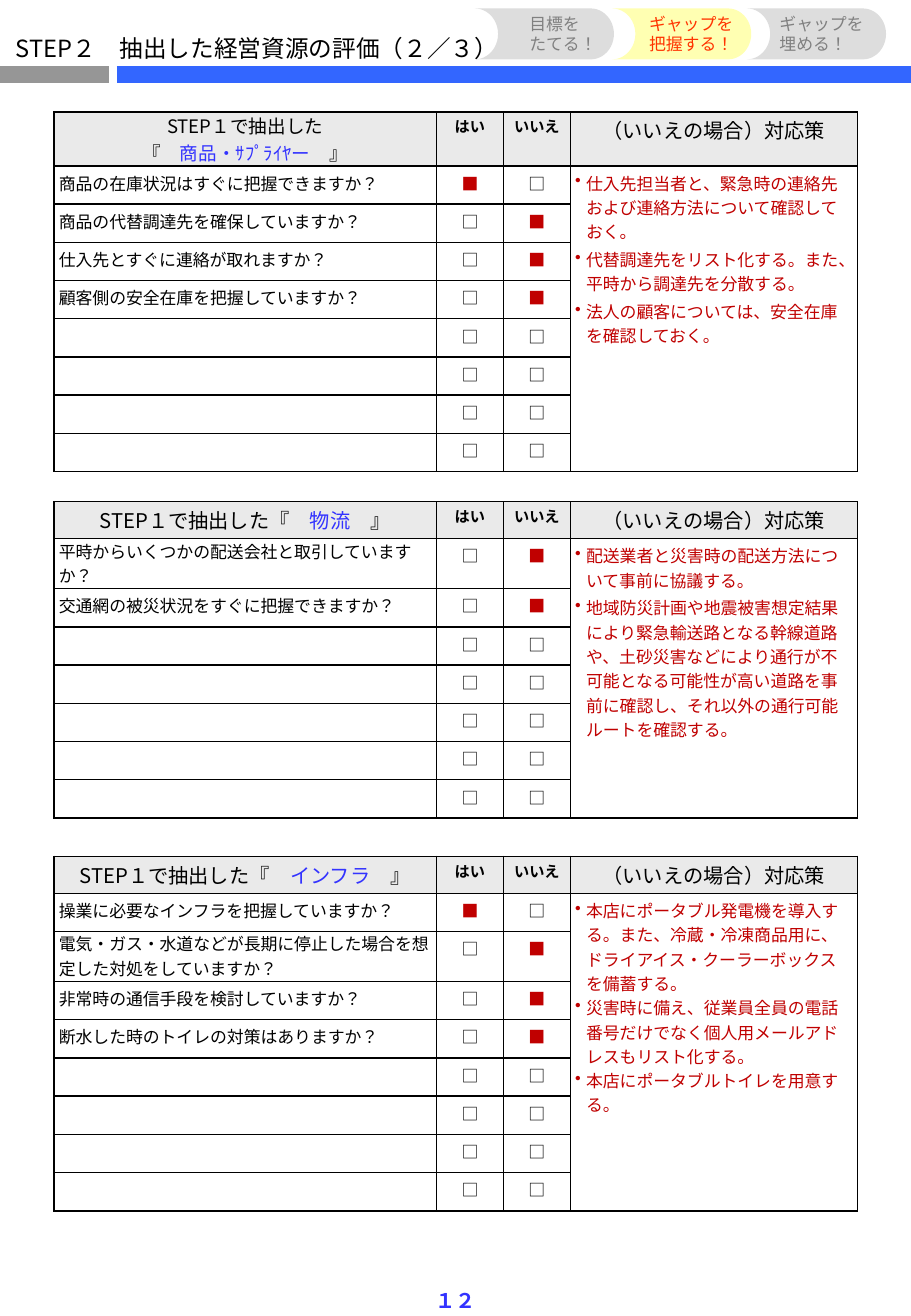
from dataclasses import dataclass

from lxml import etree
from pptx import Presentation
from pptx.dml.color import RGBColor
from pptx.enum import lang, shapes, text
from pptx.oxml import ns
from pptx.util import Pt


@dataclass(frozen=True)
class Theme:
    font: str = "Noto Sans CJK JP"
    ink: str = "000000"
    blue: str = "3333FF"
    bar_blue: str = "3366FF"
    bar_gray: str = "969696"
    red: str = "C00000"
    header_fill: str = "EAEAEA"
    step_fill: str = "DDDDDD"
    step_ink: str = "808080"
    active_fill: str = "FFFFB2"
    active_ink: str = "FF3300"
    title: int = 14
    heading: int = 12
    tall_heading: int = 11
    body: int = 10
    answer: int = 9


theme = Theme()
LEFT, CENTER = text.PP_ALIGN.LEFT, text.PP_ALIGN.CENTER
MIDDLE, TOP = text.MSO_ANCHOR.MIDDLE, text.MSO_ANCHOR.TOP


def write(frame, lines, size=theme.body, color=theme.ink, bold=False, align=LEFT,
          anchor=MIDDLE, wrap=True, pitch=None, gap=0, bullet=False):
    """Each line is a string or a list of (string, colour) spans."""
    frame.word_wrap = wrap
    frame.vertical_anchor = anchor
    for number, line in enumerate(lines):
        para = frame.add_paragraph() if number else frame.paragraphs[0]
        para.alignment = align
        if pitch:
            para.line_spacing = Pt(pitch)
        para.space_before = Pt(gap if number else 0)
        if bullet:
            props = para._p.get_or_add_pPr()
            props.set("marL", str(Pt(6.5)))
            props.set("indent", str(-Pt(6.5)))
            etree.SubElement(props, ns.qn("a:buChar")).set("char", "•")
        for words, tint in [(line, color)] if isinstance(line, str) else line:
            span = para.add_run()
            span.text = words
            span.font.size, span.font.bold = Pt(size), bold
            span.font.name = theme.font
            span.font.language_id = lang.MSO_LANGUAGE_ID.JAPANESE
            span.font.color.rgb = RGBColor.from_string(tint)
            east_asian = etree.SubElement(span.font._element, ns.qn("a:ea"))
            east_asian.set("typeface", theme.font)
        if not line:
            end = etree.SubElement(para._p, ns.qn("a:endParaRPr"))
            end.set("sz", str(size * 100))


def dress(cell, fill=None, margin=2):
    """Set the fill, margins and black borders of a table cell."""
    cell.margin_left = cell.margin_right = Pt(2.88)
    cell.margin_top = cell.margin_bottom = Pt(margin)
    if fill:
        cell.fill.solid()
        cell.fill.fore_color.rgb = RGBColor.from_string(fill)
    else:
        cell.fill.background()
    props = cell._tc.get_or_add_tcPr()
    for place, side in enumerate(("lnL", "lnR", "lnT", "lnB")):
        border = etree.Element(ns.qn(f"a:{side}"), w=str(Pt(1)))
        solid = etree.SubElement(border, ns.qn("a:solidFill"))
        etree.SubElement(solid, ns.qn("a:srgbClr")).set("val", theme.ink)
        props.insert(place, border)


deck = Presentation()
deck.slide_width, deck.slide_height = Pt(540), Pt(779.76)
page = deck.slides.add_slide(deck.slide_layouts[5])

# Title and the two bars below it
title = page.shapes.title
title.left, title.top, title.width, title.height = Pt(2), Pt(16.5), Pt(323), Pt(24.5)
title.text_frame.auto_size = text.MSO_AUTO_SIZE.NONE
write(title.text_frame, ["STEP２　抽出した経営資源の評価（２／３）"], size=theme.title)

for start, end, color in ((0, 64.8, theme.bar_gray), (69.3, 540, theme.bar_blue)):
    bar = page.shapes.add_connector(shapes.MSO_CONNECTOR.STRAIGHT,
                                    Pt(start), Pt(44), Pt(end), Pt(44))
    bar.line.color.rgb = RGBColor.from_string(color)
    bar.line.width = Pt(10)
    etree.SubElement(bar._element.spPr, ns.qn("a:effectLst"))

# Progress steps: arrow left, label left, label width, lines, active
STEPS = [
    (442.8, 455, 64.8, ["ギャップを", "埋める！"], False),
    (362.9, 377.3, 64.8, ["ギャップを", "把握する！"], True),
    (281.5, 306.7, 54.7, ["目標を", "たてる！"], False),
]
for arrow_left, label_left, label_width, lines, active in STEPS:
    arrow = page.shapes.add_shape(shapes.MSO_SHAPE.FLOWCHART_STORED_DATA,
                                  Pt(arrow_left), Pt(5), Pt(82.4), Pt(30.2))
    arrow._element.spPr.xfrm.set("flipH", "1")
    arrow.shadow.inherit = False
    arrow.fill.solid()
    arrow.fill.fore_color.rgb = RGBColor.from_string(
        theme.active_fill if active else theme.step_fill)
    arrow.line.fill.background()
    label = page.shapes.add_textbox(Pt(label_left), Pt(4.3), Pt(label_width), Pt(31.7))
    write(label.text_frame, lines, wrap=False, pitch=12.2, anchor=TOP,
          color=theme.active_ink if active else theme.step_ink,
          align=CENTER if active else LEFT)

# Checklists: top, heading lines, rows, bullet gap, questions with answer, measures
COLUMNS = (226.7, 39.7, 39.7, 170.1)
ROW, TALL_ROW, HEADER, TALL_HEADER = 22.67, 29.6, 21.9, 32
YES, NO = "はい", "いいえ"
CHECKLISTS = [
    (66.3, ["STEP１で抽出した",
            [("『", theme.ink), ("　商品・ｻﾌﾟﾗｲﾔー　", theme.blue), ("』", theme.ink)]],
     8, 2,
     [("商品の在庫状況はすぐに把握できますか？", YES),
      ("商品の代替調達先を確保していますか？", NO),
      ("仕入先とすぐに連絡が取れますか？", NO),
      ("顧客側の安全在庫を把握していますか？", NO)],
     ["仕入先担当者と、緊急時の連絡先および連絡方法について確認しておく。",
      "代替調達先をリスト化する。また、平時から調達先を分散する。",
      "法人の顧客については、安全在庫を確認しておく。"]),
    (297.3, [[("STEP１で抽出した『　", theme.ink), ("物流　", theme.blue), ("』", theme.ink)]],
     7, 2,
     [("平時からいくつかの配送会社と取引していますか？", NO),
      ("交通網の被災状況をすぐに把握できますか？", NO)],
     ["配送業者と災害時の配送方法について事前に協議する。",
      "地域防災計画や地震被害想定結果により緊急輸送路となる幹線道路や、"
      "土砂災害などにより通行が不可能となる可能性が高い道路を事前に確認し、"
      "それ以外の通行可能ルートを確認する。"]),
    (507.4, [[("STEP１で抽出した『　", theme.ink), ("インフラ　", theme.blue), ("』", theme.ink)]],
     8, 0,
     [("操業に必要なインフラを把握していますか？", YES),
      ("電気・ガス・水道などが長期に停止した場合を想定した対処をしていますか？", NO),
      ("非常時の通信手段を検討していますか？", NO),
      ("断水した時のトイレの対策はありますか？", NO)],
     ["本店にポータブル発電機を導入する。また、冷蔵・冷凍商品用に、"
      "ドライアイス・クーラーボックスを備蓄する。",
      "災害時に備え、従業員全員の電話番号だけでなく個人用メールアドレスもリスト化する。",
      "本店にポータブルトイレを用意する。"]),
]
for top, heading, row_count, gap, questions, measures in CHECKLISTS:
    questions = questions + [("", None)] * (row_count - len(questions))
    two_lines = len(heading) > 1
    wraps = [len(question) * theme.body > COLUMNS[0] - 5.76 for question, _ in questions]
    heights = [TALL_HEADER if two_lines else HEADER]
    heights += [TALL_ROW if wrap else ROW for wrap in wraps]
    frame = page.shapes.add_table(row_count + 1, len(COLUMNS), Pt(32), Pt(top),
                                  Pt(sum(COLUMNS)), Pt(sum(heights)))
    table = frame.table
    table.first_row = table.horz_banding = False
    for column, width in zip(table.columns, COLUMNS):
        column.width = Pt(width)
    for row, height in zip(table.rows, heights):
        row.height = Pt(height)

    for column in range(len(COLUMNS)):
        dress(table.cell(0, column), theme.header_fill,
              margin=0 if two_lines and column == 0 else 2)
    write(table.cell(0, 0).text_frame, heading, align=CENTER,
          size=theme.tall_heading if two_lines else theme.heading)
    for column, answer in enumerate((YES, NO), 1):
        write(table.cell(0, column).text_frame, [answer], size=theme.answer,
              bold=True, align=CENTER)
    write(table.cell(0, 3).text_frame, ["（いいえの場合）対応策"],
          size=theme.heading, align=CENTER)

    for row, ((question, chosen), wrap) in enumerate(zip(questions, wraps), 1):
        for column in range(len(COLUMNS)):
            dress(table.cell(row, column), margin=0 if wrap and column == 0 else 2.88)
        write(table.cell(row, 0).text_frame, [question] if question else [[]])
        for column, answer in enumerate((YES, NO), 1):
            checked = answer == chosen
            write(table.cell(row, column).text_frame, ["■" if checked else "□"],
                  color=theme.red if checked else theme.ink, align=CENTER)

    table.cell(1, 3).merge(table.cell(row_count, 3))
    write(table.cell(1, 3).text_frame, measures, color=theme.red,
          anchor=TOP, gap=gap, bullet=True)

page_number = page.shapes.add_textbox(Pt(250.6), Pt(759.6), Pt(38.9), Pt(22.3))
write(page_number.text_frame, ["１２"], size=theme.heading, color=theme.blue,
      bold=True, align=CENTER, wrap=False)

deck.save("out.pptx")
